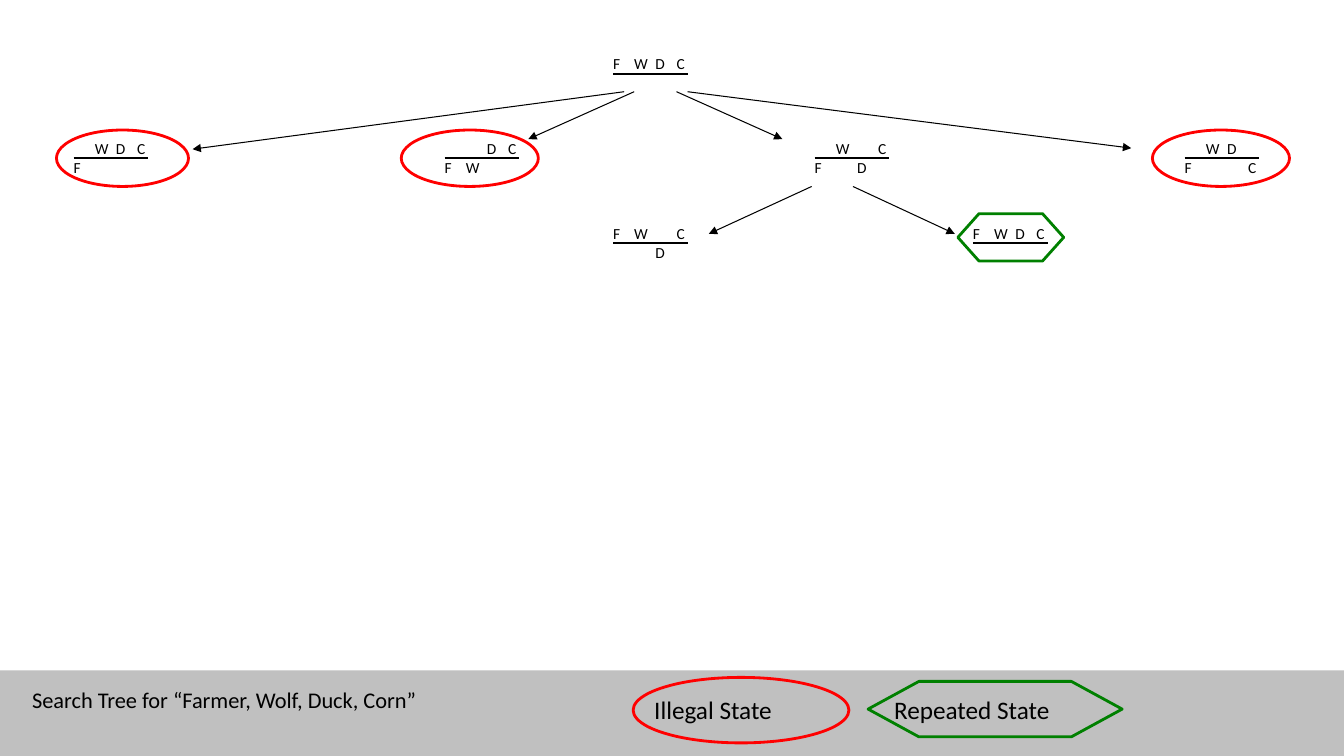
from lxml import etree
from pptx import Presentation
from pptx.dml.color import RGBColor
from pptx.enum import shapes, text
from pptx.oxml import ns
from pptx.util import Inches, Pt

FONT = "Calibri"
BLACK, RED, GREEN, GRAY = "000000", "FF0000", "008000", "C0C0C0"
OVAL = shapes.MSO_SHAPE.OVAL
HEXAGON = shapes.MSO_SHAPE.FLOWCHART_PREPARATION

deck = Presentation()
deck.slide_width, deck.slide_height = Inches(13.33), Inches(7.5)
page = deck.slides.add_slide(deck.slide_layouts[6])


def add_label(words, left, top, width, height, size, inset=True, wrap=True):
    box = page.shapes.add_textbox(Inches(left), Inches(top), Inches(width), Inches(height))
    frame = box.text_frame
    frame.word_wrap = wrap
    frame.auto_size = text.MSO_AUTO_SIZE.SHAPE_TO_FIT_TEXT
    if not inset:
        frame.margin_left = frame.margin_right = frame.margin_top = frame.margin_bottom = 0
    span = frame.paragraphs[0].add_run()
    span.text = words
    span.font.name, span.font.size = FONT, Pt(size)
    span.font.color.rgb = RGBColor.from_string(BLACK)


def add_line(start, end, weight, arrow=False):
    line = page.shapes.add_connector(
        shapes.MSO_CONNECTOR.STRAIGHT, *[Inches(value) for value in (*start, *end)])
    line.line.color.rgb = RGBColor.from_string(BLACK)
    line.line.width = Pt(weight)
    if arrow:
        etree.SubElement(line.line._get_or_add_ln(), ns.qn("a:tailEnd"), type="triangle")
    etree.SubElement(line._element.spPr, ns.qn("a:effectLst"))


footer = page.shapes.add_shape(
    shapes.MSO_SHAPE.RECTANGLE, 0, Inches(6.65), deck.slide_width, Inches(0.85))
footer.shadow.inherit = False
footer.fill.solid()
footer.fill.fore_color.rgb = RGBColor.from_string(GRAY)
footer.line.fill.background()

# Each state: left, river line height, who stands on the far bank
ITEMS = "FWDC"
ITEM_STEP, ROW_HEIGHT, RIVER_WIDTH = 0.21, 0.19, 0.74
ROOT_Y, CHILD_Y, GRANDCHILD_Y = 0.73, 1.57, 2.41
states = [
    (6.08, ROOT_Y, ""),
    (0.73, CHILD_Y, "F"),
    (4.41, CHILD_Y, "FW"),
    (8.08, CHILD_Y, "FD"),
    (11.75, CHILD_Y, "FC"),
    (6.08, GRANDCHILD_Y, "D"),
    (9.65, GRANDCHILD_Y, ""),
]
for left, river, crossed in states:
    for column, item in enumerate(ITEMS):
        top = river if item in crossed else river - ROW_HEIGHT
        add_label(item, left + column * ITEM_STEP, top, ITEM_STEP, ROW_HEIGHT, 11, inset=False)
    add_line((left, river), (left + RIVER_WIDTH, river), 1.5)

moves = [
    ((6.19, 0.91), (1.91, 1.48)),
    ((6.29, 0.91), (5.24, 1.38)),
    ((6.71, 0.91), (7.76, 1.38)),
    ((6.82, 0.91), (11.22, 1.47)),
    ((8.05, 1.85), (7.03, 2.32)),
    ((8.46, 1.85), (9.47, 2.32)),
]
for start, end in moves:
    add_line(start, end, 0.75, arrow=True)

# Rings around states, then the two legend samples
rings = [
    (OVAL, RED, 0.56, 1.29, 1.31, 0.56),
    (OVAL, RED, 3.98, 1.29, 1.36, 0.56),
    (OVAL, RED, 11.43, 1.29, 1.36, 0.56),
    (HEXAGON, GREEN, 9.5, 2.12, 1.05, 0.47),
    (OVAL, RED, 6.28, 6.72, 2.14, 0.65),
    (HEXAGON, GREEN, 8.61, 6.76, 2.52, 0.55),
]
for kind, color, *place in rings:
    ring = page.shapes.add_shape(kind, *[Inches(value) for value in place])
    ring.shadow.inherit = False
    ring.fill.background()
    ring.line.color.rgb = RGBColor.from_string(color)
    ring.line.width = Pt(2)

add_label("Repeated State", 8.77, 6.84, 2.3, 0.4, 18)
add_label("Illegal State", 6.39, 6.84, 1.38, 0.4, 18, wrap=False)
add_label("Search Tree for “Farmer, Wolf, Duck, Corn”", 0.22, 6.76, 5.78, 0.37, 16)

deck.save("out.pptx")
